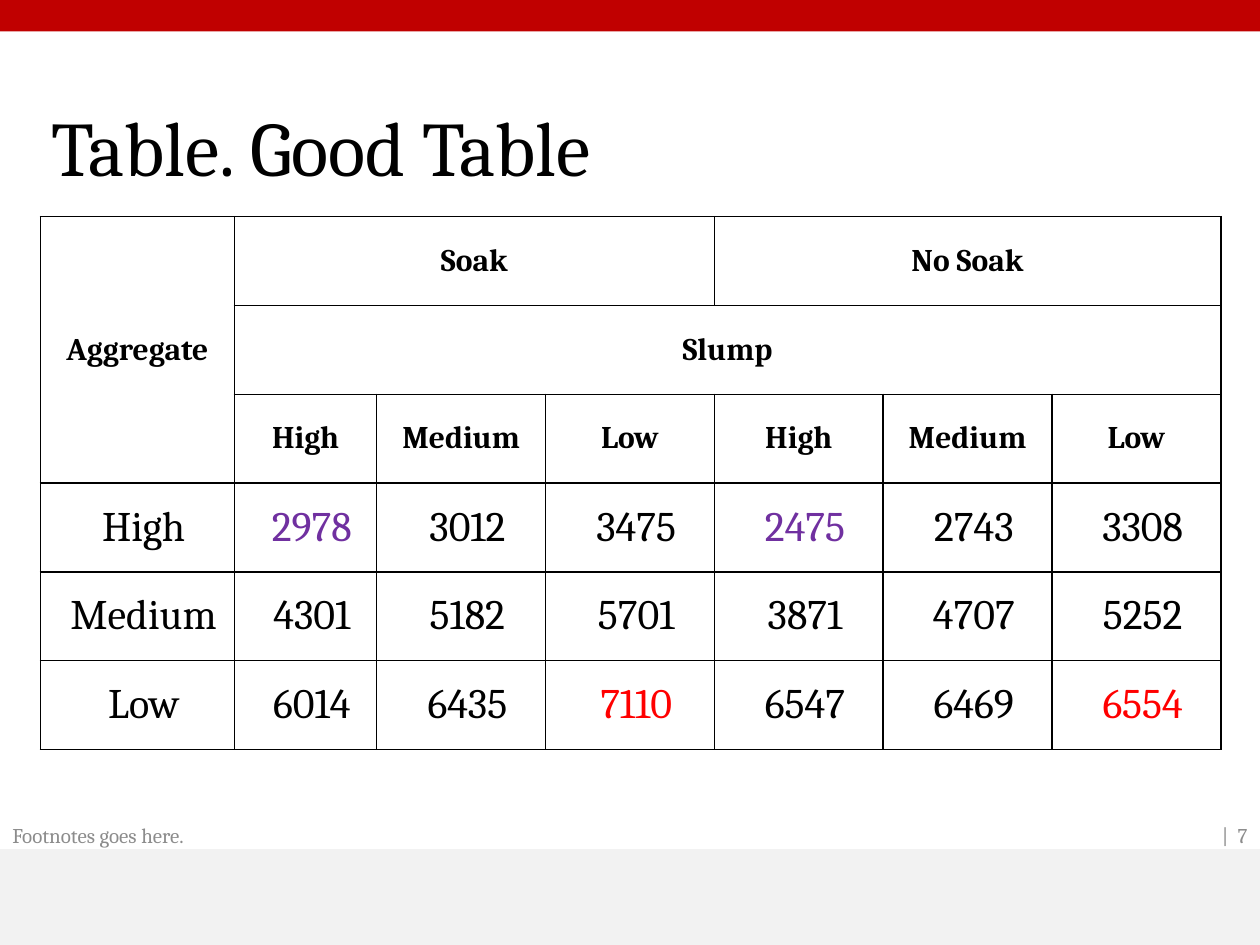
from dataclasses import dataclass

from lxml import etree
from pptx import Presentation
from pptx.dml.color import RGBColor
from pptx.enum.shapes import MSO_SHAPE
from pptx.enum.text import MSO_ANCHOR, MSO_AUTO_SIZE, PP_ALIGN
from pptx.oxml.ns import qn
from pptx.util import Pt

PX = 9144  # 100 px to the inch
WIDE, HIGH = 1000, 750
RECT = MSO_SHAPE.RECTANGLE
LEFT, MID, RIGHT = PP_ALIGN.LEFT, PP_ALIGN.CENTER, PP_ALIGN.RIGHT
CENTER, BOTTOM = MSO_ANCHOR.MIDDLE, MSO_ANCHOR.BOTTOM


@dataclass(frozen=True)
class Theme:
    font: str = "Cambria"
    ink: str = "000000"
    paper: str = "FFFFFF"
    band: str = "C00000"
    foot: str = "F2F2F2"
    note: str = "8C8C8C"
    least: str = "7030A0"
    most: str = "FF0000"
    title: int = 44
    body: int = 24
    head: int = 18
    small: int = 12


THEME = Theme()
COLS = [154, 113] + [134] * 5
SOAKS = ["Soak", "No Soak"]
LEVELS = ["High", "Medium", "Low"]
DATA = [
    [2978, 3012, 3475, 2475, 2743, 3308],
    [4301, 5182, 5701, 3871, 4707, 5252],
    [6014, 6435, 7110, 6547, 6469, 6554],
]
SPAN = len(LEVELS)


def emu(box):
    return [n * PX for n in box]


def write(frame, text, size, color=THEME.ink, bold=False, align=LEFT, space=None):
    para = frame.paragraphs[0]
    para.alignment = align
    para.line_spacing = space
    run = para.add_run()
    run.text = text
    font = run.font
    font.name, font.size, font.bold = THEME.font, Pt(size), bold
    font.color.rgb = RGBColor.from_string(color)
    return para


def add_band(slide, box, color):
    band = slide.shapes.add_shape(RECT, *emu(box))
    band.shadow.inherit = False
    band.fill.solid()
    band.fill.fore_color.rgb = RGBColor.from_string(color)
    band.line.fill.background()


def add_title(slide, box, text):
    title = slide.shapes.title
    title.left, title.top, title.width, title.height = emu(box)
    frame = title.text_frame
    frame.auto_size = MSO_AUTO_SIZE.NONE
    frame.vertical_anchor = BOTTOM
    write(frame, text, THEME.title, space=0.9)


def add_note(slide, box, text, align):
    frame = slide.shapes.add_textbox(*emu(box)).text_frame
    frame.word_wrap = True
    frame.margin_top = frame.margin_bottom = 0
    frame.vertical_anchor = CENTER
    write(frame, text, THEME.small, THEME.note, align=align)


def add_foot(slide, box, note, page):
    left, top, width, height = box
    split = 855
    add_note(slide, (left, top, split, height), note, LEFT)
    add_note(slide, (left + split, top, width - split, height), page, RIGHT)


def rule_cell(cell):
    """Fill the cell and draw its four edges."""
    cell.fill.solid()
    cell.fill.fore_color.rgb = RGBColor.from_string(THEME.paper)
    props = cell._tc.get_or_add_tcPr()
    for spot, side in enumerate("LRTB"):
        edge = etree.Element(qn(f"a:ln{side}"), w=str(Pt(1)))
        fill = etree.SubElement(edge, qn("a:solidFill"))
        etree.SubElement(fill, qn("a:srgbClr"), val=THEME.ink)
        props.insert(spot, edge)


def head_cell(table, row, col, text, rows=1, cols=1):
    cell = table.cell(row, col)
    if rows * cols > 1:
        cell.merge(table.cell(row + rows - 1, col + cols - 1))
    write(cell.text_frame, text, THEME.head, bold=True, align=MID)


def body_cell(cell, text, color=THEME.ink):
    cell.margin_left = cell.margin_right = 0
    cell.margin_top = cell.margin_bottom = 0
    para = write(cell.text_frame, text, THEME.body, color, align=MID)
    para._p.get_or_add_pPr().set("marL", str(10 * PX))


def tint(value, col):
    """Mark the least and the most value within each soak group."""
    start = col // SPAN * SPAN
    group = [n for line in DATA for n in line[start:start + SPAN]]
    return {min(group): THEME.least, max(group): THEME.most}.get(value, THEME.ink)


def add_grid(slide, box):
    heads = 3
    count = heads + len(DATA)
    table = slide.shapes.add_table(count, len(COLS), *emu(box)).table
    table.first_row = table.horz_banding = False
    for col, width in zip(table.columns, COLS):
        col.width = width * PX
    for row in table.rows:
        row.height = box[3] * PX // count
    for cell in table.iter_cells():
        rule_cell(cell)
        cell.vertical_anchor = CENTER

    # Header rows
    head_cell(table, 0, 0, "Aggregate", rows=heads)
    head_cell(table, 1, 1, "Slump", cols=len(COLS) - 1)
    for group, soak in enumerate(SOAKS):
        first = 1 + group * SPAN
        head_cell(table, 0, first, soak, cols=SPAN)
        for step, level in enumerate(LEVELS):
            head_cell(table, 2, first + step, level)

    # Body rows
    for row, (level, line) in enumerate(zip(LEVELS, DATA), heads):
        body_cell(table.cell(row, 0), level)
        for col, value in enumerate(line):
            body_cell(table.cell(row, col + 1), str(value), tint(value, col))


def main():
    deck = Presentation()
    deck.slide_width, deck.slide_height = emu((WIDE, HIGH))
    slide = deck.slides.add_slide(deck.slide_layouts[5])
    add_band(slide, (0, 0, WIDE, 25), THEME.band)
    add_band(slide, (0, 674, WIDE, 76), THEME.foot)
    add_title(slide, (31, 40, 938, 118), "Table. Good Table")
    add_foot(slide, (0, 652, WIDE, 22), "Footnotes goes here.", "|  7")
    add_grid(slide, (32, 172, sum(COLS), 423))
    deck.save("out.pptx")


if __name__ == "__main__":
    main()
